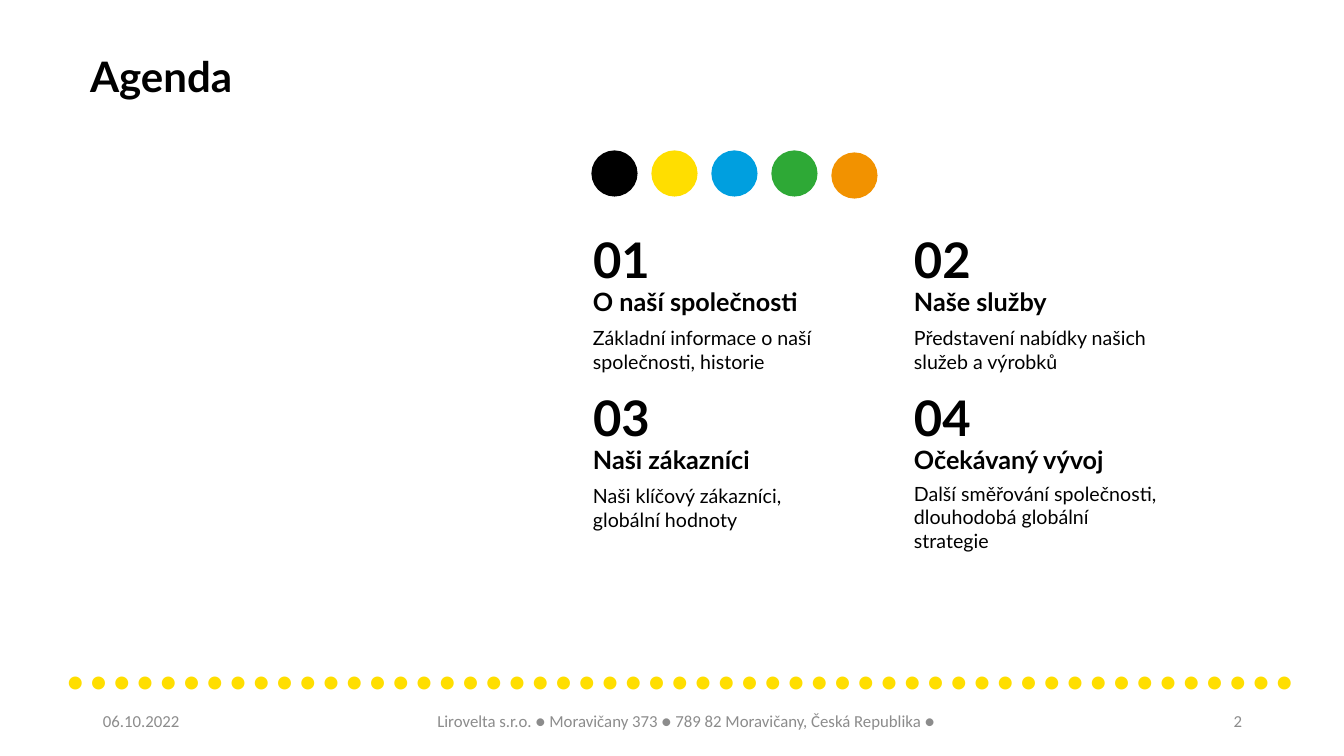
import pptx
import pptx.dml.color
import pptx.enum.shapes
import pptx.enum.text
import pptx.util

RGBColor = pptx.dml.color.RGBColor
ALIGN = pptx.enum.text.PP_ALIGN
ANCHOR = pptx.enum.text.MSO_ANCHOR

SLIDE_W, SLIDE_H = 1344, 756
EMU_PER_PX = 12192000 / SLIDE_W

BLACK = RGBColor(0x00, 0x00, 0x00)
YELLOW = RGBColor(0xFF, 0xDE, 0x00)
BLUE = RGBColor(0x00, 0x9F, 0xDF)
GREEN = RGBColor(0x2E, 0xA9, 0x36)
ORANGE = RGBColor(0xF2, 0x92, 0x00)
GRAY = RGBColor(0x8C, 0x8C, 0x8C)

COLUMN_LEFT, COLUMN_PITCH = 593, 321
ROW_TOP, ROW_PITCH = 237, 158
TOPIC_W = 254
CIRCLE_SIZE, CIRCLE_PITCH = 43, 60
DOT_COUNT = 53

# Heading, description, description height
TOPICS = [
    ("O naší společnosti", "Základní informace o naší společnosti, historie", 53),
    ("Naše služby", "Představení nabídky našich služeb a výrobků", 53),
    ("Naši zákazníci", "Naši klíčový zákazníci, globální hodnoty", 53),
    ("Očekávaný vývoj", "Další směřování společnosti, dlouhodobá globální strategie", 72),
]

# Colour, top
CIRCLES = [(BLACK, 152), (YELLOW, 152), (BLUE, 152), (GREEN, 152), (ORANGE, 154)]

# Text, left, width, alignment
FOOTER = [
    ("06.10.2022", 93, 302, ALIGN.LEFT),
    ("Lirovelta s.r.o. ● Moravičany 373 ● 789 82 Moravičany, Česká Republika ●",
     419, 535, ALIGN.CENTER),
    ("2", 950, 302, ALIGN.RIGHT),
]


def px(length):
    return pptx.util.Emu(round(length * EMU_PER_PX))


def add_text(slide, text, left, top, width, height, size, font="Lato",
             color=BLACK, bold=False, align=ALIGN.LEFT, anchor=ANCHOR.MIDDLE,
             inset=True):
    """Add a one-run text box and return its paragraph."""
    box = slide.shapes.add_textbox(px(left), px(top), px(width), px(height))
    frame = box.text_frame
    frame.word_wrap = True
    frame.vertical_anchor = anchor
    if not inset:
        frame.margin_left = frame.margin_right = 0
        frame.margin_top = frame.margin_bottom = 0
    paragraph = frame.paragraphs[0]
    paragraph.alignment = align
    run = paragraph.add_run()
    run.text = text
    run.font.name = font
    run.font.size = pptx.util.Pt(size)
    run.font.bold = bold
    run.font.color.rgb = color
    return paragraph


def add_dotted_rule(slide):
    dots = add_text(slide, " ".join(["●"] * DOT_COUNT), 57, 656, 1277, 45, 20,
                    font="Calibri", color=YELLOW, anchor=ANCHOR.TOP)
    dots.line_spacing = 1.07
    dots.space_after = pptx.util.Pt(8)


def add_topic(slide, index, heading, description, description_h):
    row, column = divmod(index, 2)
    left = COLUMN_LEFT + column * COLUMN_PITCH
    top = ROW_TOP + row * ROW_PITCH
    add_text(slide, f"{index + 1:02}", left, top, 81, 43, 35, bold=True, inset=False)
    add_text(slide, heading, left, top + 45, TOPIC_W, 39, 18, bold=True, inset=False)
    add_text(slide, description, left, top + 86, TOPIC_W, description_h, 14, inset=False)


def add_circle(slide, left, top, color):
    circle = slide.shapes.add_shape(
        pptx.enum.shapes.MSO_SHAPE.OVAL,
        px(left), px(top), px(CIRCLE_SIZE), px(CIRCLE_SIZE))
    circle.shadow.inherit = False
    circle.fill.solid()
    circle.fill.fore_color.rgb = color
    circle.line.color.rgb = color
    circle.line.width = pptx.util.Pt(2.25)


def main():
    deck = pptx.Presentation()
    deck.slide_width, deck.slide_height = px(SLIDE_W), px(SLIDE_H)
    slide = deck.slides.add_slide(deck.slide_layouts[6])

    add_dotted_rule(slide)
    add_text(slide, "Agenda", 90, 50, 850, 52, 30, bold=True, inset=False)
    for index, topic in enumerate(TOPICS):
        add_topic(slide, index, *topic)
    for index, (color, top) in enumerate(CIRCLES):
        add_circle(slide, COLUMN_LEFT + index * CIRCLE_PITCH, top, color)
    for text, left, width, align in FOOTER:
        add_text(slide, text, left, 701, width, 40, 12, font="Calibri",
                 color=GRAY, align=align)

    deck.save("out.pptx")


if __name__ == "__main__":
    main()
